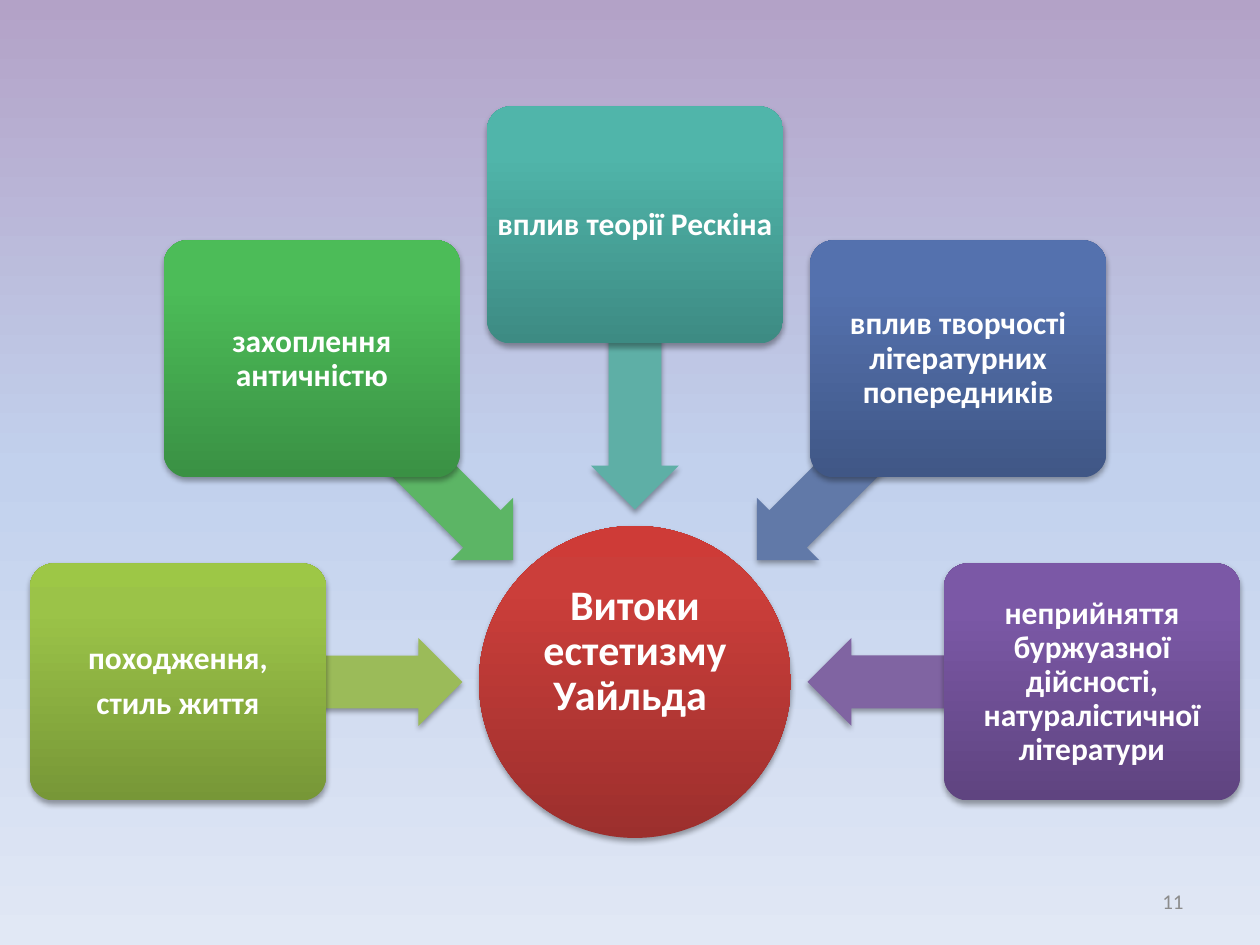
import copy
import math

from lxml import etree
from pptx import Presentation
from pptx import util as u
from pptx.dml.color import RGBColor
from pptx.enum import shapes, text
from pptx.oxml import ns

EMU_PER_PX = 914400 / 126
FONT = "Calibri"
WHITE = RGBColor(0xFF, 0xFF, 0xFF)
GRAY = RGBColor(0x8C, 0x8C, 0x8C)
BACKGROUND = (RGBColor(0xB3, 0xA2, 0xC7), RGBColor(0xC2, 0xD1, 0xED), RGBColor(0xE1, 0xE8, 0xF5))
RED = (RGBColor(0x9C, 0x2F, 0x2D), RGBColor(0xCB, 0x3E, 0x3A), RGBColor(0xCE, 0x3B, 0x37))
LIME = (RGBColor(0x77, 0x97, 0x37), RGBColor(0x9B, 0xC3, 0x48), RGBColor(0x9D, 0xC7, 0x46))
GREEN = (RGBColor(0x3A, 0x91, 0x44), RGBColor(0x4C, 0xBC, 0x58), RGBColor(0x4A, 0xBF, 0x57))
TEAL = (RGBColor(0x3D, 0x8B, 0x83), RGBColor(0x50, 0xB5, 0xAA), RGBColor(0x4E, 0xB8, 0xAC))
BLUE = (RGBColor(0x40, 0x57, 0x86), RGBColor(0x54, 0x71, 0xAE), RGBColor(0x52, 0x71, 0xB0))
PURPLE = (RGBColor(0x5F, 0x44, 0x80), RGBColor(0x7B, 0x58, 0xA6), RGBColor(0x7C, 0x57, 0xA8))
LIME_ARROW = RGBColor(0x9B, 0xBB, 0x59)
GREEN_ARROW = RGBColor(0x5C, 0xB5, 0x65)
TEAL_ARROW = RGBColor(0x5E, 0xAF, 0xA6)
BLUE_ARROW = RGBColor(0x61, 0x79, 0xA8)
PURPLE_ARROW = RGBColor(0x80, 0x64, 0xA2)

HUB = (635, 682)
HUB_SIZE = (312, 312)
BOX_SIZE = (296, 237)
ARROW_SIZE = (285, 88)
BOX_RADIUS = 457
ARROW_RADIUS = 315

SOURCES = [
    (["походження,", "стиль життя"], LIME, LIME_ARROW),
    (["захоплення античністю"], GREEN, GREEN_ARROW),
    (["вплив теорії Рескіна"], TEAL, TEAL_ARROW),
    (["вплив творчості літературних попередників"], BLUE, BLUE_ARROW),
    (["неприйняття буржуазної дійсності, натуралістичної літератури"], PURPLE, PURPLE_ARROW),
]


def px(n):
    return u.Emu(round(n * EMU_PER_PX))


def set_attrs(obj, values):
    for name, value in values.items():
        setattr(obj, name, value)


def set_gradient(fill, element, colors, positions, angle):
    fill.gradient()
    fill.gradient_angle = angle
    stops = next(element.iter(ns.qn("a:gsLst")))
    stops.append(copy.deepcopy(stops[0]))
    for stop, color, position in zip(fill.gradient_stops, colors, positions):
        stop.color.rgb = color
        stop.position = position


def add_shadow(sp):
    sp.shadow.inherit = False
    effects = sp._element.spPr.find(ns.qn("a:effectLst"))
    shadow = etree.SubElement(effects, ns.qn("a:outerShdw"), blurRad="40000",
                              dist="23000", dir="5400000", rotWithShape="0")
    color = etree.SubElement(shadow, ns.qn("a:srgbClr"), val="000000")
    etree.SubElement(color, ns.qn("a:alpha"), val="35000")


def add_centered_shape(s, kind, center, size, adjustments=()):
    (x, y), (w, h) = center, size
    sp = s.shapes.add_shape(kind, px(x - w / 2), px(y - h / 2), px(w), px(h))
    for i, value in enumerate(adjustments):
        sp.adjustments[i] = value
    sp.line.fill.background()
    add_shadow(sp)
    return sp


def write_text(sp, lines, frame, paragraph, font):
    tf = sp.text_frame
    set_attrs(tf, {"word_wrap": True, "vertical_anchor": text.MSO_ANCHOR.MIDDLE, **frame})
    for i, line in enumerate(lines):
        p = tf.add_paragraph() if i else tf.paragraphs[0]
        set_attrs(p, paragraph)
        r = p.add_run()
        r.text = line
        set_attrs(r.font, {"name": FONT, "size": u.Pt(font["size"]), "bold": font["bold"]})
        r.font.color.rgb = font["color"]


def add_label_shape(s, kind, center, size, lines, colors, points, bottom=0, adjustments=()):
    sp = add_centered_shape(s, kind, center, size, adjustments)
    set_gradient(sp.fill, sp._element, colors, (0, 0.8, 1), 90)
    frame = {"margin_left": 0, "margin_right": 0, "margin_top": 0, "margin_bottom": px(bottom)}
    paragraph = {"alignment": text.PP_ALIGN.CENTER, "line_spacing": 0.9,
                 "space_after": u.Pt(points * 0.35)}
    write_text(sp, lines, frame, paragraph, {"size": points, "bold": True, "color": WHITE})


def add_arrow(s, center, rotation, color):
    sp = add_centered_shape(s, shapes.MSO_SHAPE.LEFT_ARROW, center, ARROW_SIZE, (0.6, 0.5))
    sp.rotation = rotation
    sp.fill.solid()
    sp.fill.fore_color.rgb = color


def around_hub(radius, degrees):
    angle = math.radians(degrees)
    return HUB[0] + radius * math.cos(angle), HUB[1] + radius * math.sin(angle)


def add_slide_number(s, number):
    sp = s.shapes.add_textbox(px(903), px(876), px(293), px(50))
    write_text(sp, [number], {}, {"alignment": text.PP_ALIGN.RIGHT},
               {"size": 12, "bold": False, "color": GRAY})


def main():
    prs = Presentation()
    set_attrs(prs, {"slide_width": px(1260), "slide_height": px(945)})
    s = prs.slides.add_slide(prs.slide_layouts[6])
    set_gradient(s.background.fill, s._element, BACKGROUND, (0, 0.5, 1), 270)
    add_slide_number(s, "11")
    add_label_shape(s, shapes.MSO_SHAPE.OVAL, HUB, HUB_SIZE,
                    ["Витоки естетизму Уайльда "], RED, 24, bottom=60)
    for i, (lines, colors, arrow_color) in enumerate(SOURCES):
        degrees = 180 + 45 * i
        add_arrow(s, around_hub(ARROW_RADIUS, degrees), degrees % 360, arrow_color)
        add_label_shape(s, shapes.MSO_SHAPE.ROUNDED_RECTANGLE, around_hub(BOX_RADIUS, degrees),
                        BOX_SIZE, lines, colors, 18, adjustments=(0.1,))
    prs.save("out.pptx")


if __name__ == "__main__":
    main()
